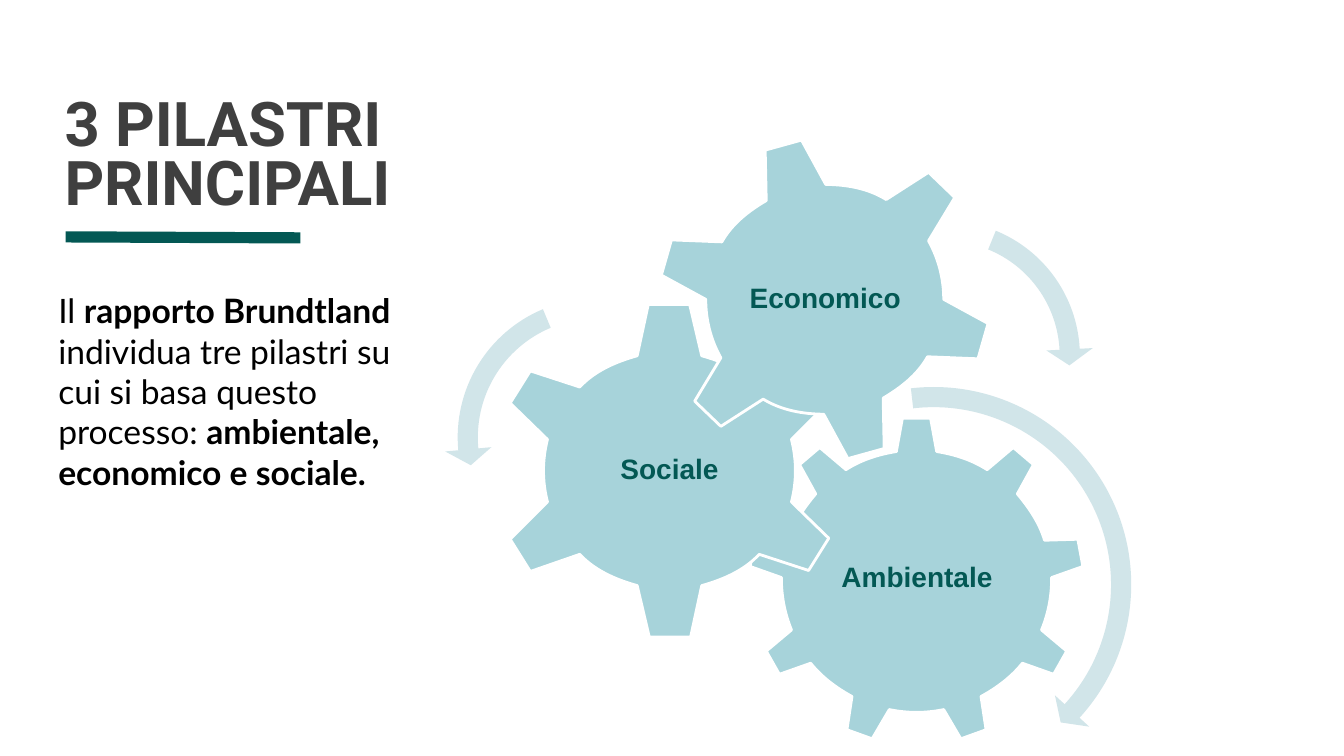
from math import atan2, ceil, cos, degrees, hypot, radians, sin, tan

from lxml import etree
from pptx import Presentation
from pptx import util as u
from pptx.dml.color import RGBColor
from pptx.enum import shapes, text
from pptx.oxml import ns

GREEN = RGBColor(0x03, 0x58, 0x54)
GRAY = RGBColor(0x3F, 0x3F, 0x3F)
BLACK = RGBColor(0, 0, 0)
WHITE = RGBColor(255, 255, 255)
AQUA = RGBColor(0xA7, 0xD3, 0xDA)
PALE = RGBColor(0xD1, 0xE5, 0xE9)


def polar(angle, radius):
    """Point at an angle in degrees, clockwise from the right."""
    return radius * cos(radians(angle)), radius * sin(radians(angle))


def spin(point, angle):
    """Turn a point clockwise about the zero point."""
    x, y = point
    return polar(degrees(atan2(y, x)) + angle, hypot(x, y))


def sweep(start, end, first, last):
    """Curves about the zero point, the radius going from first to last."""
    count = ceil(abs(end - start) / 90)
    step = (end - start) / count
    pull = 4 / 3 * tan(radians(step) / 4)
    curves = []
    for i in range(count):
        a, b = start + i * step, start + (i + 1) * step
        p = first + (last - first) * i / count
        q = first + (last - first) * (i + 1) / count
        (ax, ay), (bx, by) = polar(a, p), polar(b, q)
        curves.append([(ax - pull * ay, ay + pull * ax),
                       (bx + pull * by, by - pull * bx), (bx, by)])
    return curves


def mirror(half):
    """Close an outline about its vertical axis."""
    return [(-x, y) for x, y in reversed(half)] + half


def turn(half):
    """Close an outline by half a turn about its centre."""
    return half + [(-x, -y) for x, y in half]


def write(frame, words, font, size, color, bold=False, align=None, space=None):
    """Fill a frame; asterisks switch bold and line ends break the line."""
    para = frame.paragraphs[0]
    para.alignment = align
    para.line_spacing = space
    for i, part in enumerate(words.split("*")):
        for j, line in enumerate(part.split("\n")):
            if j:
                para.add_line_break()
            if not line:
                continue
            run = para.add_run()
            run.text = line
            run.font.name = font
            run.font.size = u.Pt(size)
            run.font.bold = bold or i % 2 == 1
            run.font.color.rgb = color


class Page:
    def __init__(self, slide):
        self.shapes = slide.shapes

    def text(self, box, words, pad=(0, 0), anchor=text.MSO_ANCHOR.TOP, **style):
        frame = self.shapes.add_textbox(*map(u.Inches, box)).text_frame
        frame.word_wrap = True
        frame.vertical_anchor = anchor
        frame.margin_left = frame.margin_right = u.Inches(pad[0])
        frame.margin_top = frame.margin_bottom = u.Inches(pad[1])
        write(frame, words, **style)

    def rule(self, start, end, color, weight):
        line = self.shapes.add_connector(
            shapes.MSO_CONNECTOR.STRAIGHT, *map(u.Inches, start + end))
        line.line.color.rgb = color
        line.line.width = u.Pt(weight)
        etree.SubElement(line._element.spPr, ns.qn("a:effectLst"))

    def outline(self, box, mid, moves, fill, edge=None, angle=0):
        """Outline about mid, of one-point lines and three-point curves."""
        left, top, wide, high = map(u.Inches, box)
        build = self.shapes.build_freeform(left, top)
        build.add_line_segments([(left + wide, top), (left + wide, top + high),
                                 (left, top + high)])
        shape = build.convert_to_shape()
        shape.rotation = angle
        shape.shadow.inherit = False
        shape.fill.solid()
        shape.fill.fore_color.rgb = fill
        if edge is None:
            shape.line.fill.background()
        else:
            shape.line.color.rgb = edge
            shape.line.width = u.Pt(2)

        # Curves need their own drawing steps
        trace = next(shape._element.iter(ns.qn("a:path")))
        for child in list(trace):
            trace.remove(child)
        dx = mid[0] - box[0] - box[2] / 2
        dy = mid[1] - box[1] - box[3] / 2
        for i, move in enumerate(moves):
            kind = "cubicBezTo" if len(move) == 3 else "lnTo" if i else "moveTo"
            step = etree.SubElement(trace, ns.qn("a:" + kind))
            for x, y in move:
                x, y = spin((x + dx, y + dy), -angle)
                etree.SubElement(step, ns.qn("a:pt"),
                                 x=str(u.Inches(x + box[2] / 2)),
                                 y=str(u.Inches(y + box[3] / 2)))
        etree.SubElement(trace, ns.qn("a:close"))

    def gear(self, box, mid, teeth, label, area, angle=0):
        """Teeth of four points each, joined by arcs about the centre."""
        moves = [[teeth[0]]]
        for i in range(0, len(teeth), 4):
            moves += [[point] for point in teeth[i + 1:i + 4]]
            (x1, y1), (x2, y2) = teeth[i + 3], teeth[(i + 4) % len(teeth)]
            start = degrees(atan2(y1, x1))
            span = (degrees(atan2(y2, x2)) - start) % 360
            moves += sweep(start, start + span, hypot(x1, y1), hypot(x2, y2))
        self.outline(box, mid, moves, AQUA, WHITE, angle)
        self.text(area, label, pad=(0.03, 0.03), anchor=text.MSO_ANCHOR.MIDDLE,
                  font="Arial", size=20, color=GREEN, bold=True,
                  align=text.PP_ALIGN.CENTER, space=0.9)

    def arrow(self, box, mid, radius, start, end, angle=0):
        """Curved band from start to end, with a head beyond the end."""
        band, wing, head = 0.1, 0.23, 0.16
        way = 1 if end > start else -1
        tip = end + way * degrees(head / radius)
        outer, inner = radius + band, radius - band
        moves = [[polar(start, outer)]] + sweep(start, end, outer, outer)
        moves += [[polar(end, radius + wing)], [polar(tip, radius)],
                  [polar(end, radius - wing)], [polar(end, inner)]]
        moves += sweep(end, start, inner, inner)
        self.outline(box, mid, moves, PALE, angle=angle)


def main():
    deck = Presentation()
    deck.slide_width, deck.slide_height = u.Inches(13.33), u.Inches(7.5)
    page = Page(deck.slides.add_slide(deck.slide_layouts[6]))

    # Title and rule
    page.rule((0.65, 2.35), (2.98, 2.36), GREEN, 8)
    page.text((0.64, 0.44, 12, 1.72), "3 PILASTRI \nPRINCIPALI",
              anchor=text.MSO_ANCHOR.BOTTOM, font="Roboto", size=44,
              color=GRAY, bold=True, space=0.8)

    # Gears
    page.gear((7.44, 4.14, 3.32, 3.26), (9.09, 5.74), mirror([
        (0.14, -1.59), (0.2, -1.26),
        (0.7, -1.08), (0.96, -1.3), (1.16, -1.13), (1, -0.84),
        (1.27, -0.38), (1.6, -0.39), (1.65, -0.12), (1.34, -0.01),
        (1.24, 0.51), (1.49, 0.72), (1.36, 0.95), (1.05, 0.84),
        (0.64, 1.17), (0.69, 1.5), (0.44, 1.59), (0.27, 1.3)]),
        "Ambientale", (8.1, 4.9, 1.99, 1.68))
    page.gear((4.88, 2.98, 3.52, 3.37), (6.64, 4.67), turn([
        (-0.32, -1.14), (-0.21, -1.65), (0.2, -1.65), (0.32, -1.14),
        (0.89, -0.83), (1.38, -1), (1.58, -0.68), (1.21, -0.31),
        (1.21, 0.31), (1.58, 0.67), (1.38, 0.99), (0.89, 0.83)]),
        "Sociale", (5.75, 3.84, 1.78, 1.66))
    page.gear((6.51, 1.34, 3.35, 3.26), (8.18, 2.97), turn([
        (-0.58, -0.98), (-0.59, -1.48), (-0.23, -1.58), (0.01, -1.14),
        (0.61, -0.99), (1.03, -1.26), (1.29, -1.01), (1.03, -0.58),
        (1.18, 0), (1.62, 0.24), (1.52, 0.59), (1.02, 0.57)]),
        "Economico", (7.25, 2.05, 1.87, 1.84), angle=345)

    # Turning arrows
    page.arrow((7.18, 3.71, 4.17, 4.17), (9.26, 5.8), 1.86, -96.6, 42.4)
    page.arrow((4.41, 2.83, 3.03, 3.03), (5.92, 4.34), 1.28, 247.2, 174.7)
    page.arrow((7.16, 2.4, 3.99, 3.22), (9.37, 3.53), 1.24, -67.8, -3,
               angle=117.8)

    # Body text
    page.text((0.48, 2.83, 3.74, 2.12),
              "Il *rapporto Brundtland *individua tre pilastri su cui si basa "
              "questo processo: *ambientale, economico e sociale.*",
              pad=(0.1, 0.05), font="Lato", size=24, color=BLACK)

    deck.save("out.pptx")


if __name__ == "__main__":
    main()
